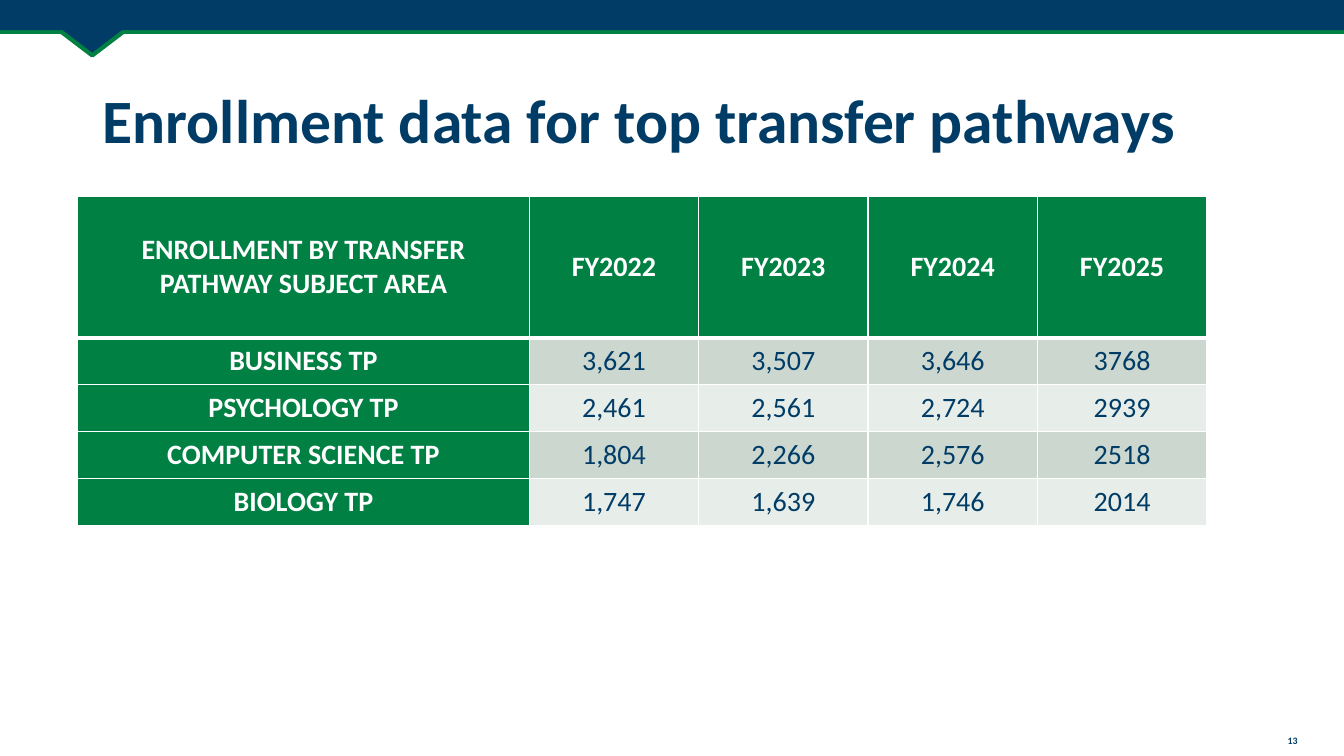
from lxml.etree import SubElement
from pptx import Presentation
from pptx.dml.color import RGBColor
from pptx.enum.shapes import MSO_CONNECTOR, MSO_SHAPE
from pptx.enum.text import MSO_ANCHOR, PP_ALIGN
from pptx.oxml.ns import qn
from pptx.util import Inches, Pt

NAVY, GREEN, WHITE = "003C66", "008042", "FFFFFF"
BANDS = ["CCD8CF", "E7EDE9"]
FONT = "Calibri"

TITLE = "Enrollment data for top transfer pathways"
PAGE_NUMBER = "13"
ENROLLMENT = [
    ["ENROLLMENT BY TRANSFER PATHWAY SUBJECT AREA", "FY2022", "FY2023", "FY2024", "FY2025"],
    ["BUSINESS TP", "3,621", "3,507", "3,646", "3768"],
    ["PSYCHOLOGY TP", "2,461", "2,561", "2,724", "2939"],
    ["COMPUTER SCIENCE TP", "1,804", "2,266", "2,576", "2518"],
    ["BIOLOGY TP", "1,747", "1,639", "1,746", "2014"],
]
COL_WIDTHS = [4.48] + [1.68] * 4
ROW_HEIGHTS = [1.4] + [0.465] * 4


def rgb(color):
    return RGBColor.from_string(color)


def add_run(p, text, size, color, bold):
    r = p.add_run()
    r.text = text
    r.font.name, r.font.size, r.font.bold = FONT, Pt(size), bold
    r.font.color.rgb = rgb(color)


def add_text(s, box, text, size, align):
    tf = s.shapes.add_textbox(*map(Inches, box)).text_frame
    tf.word_wrap = True
    tf.vertical_anchor = MSO_ANCHOR.MIDDLE
    p = tf.paragraphs[0]
    p.alignment = align
    p.line_spacing = 0.9
    add_run(p, text, size, NAVY, True)


def add_banner_shape(s, preset, box):
    sp = s.shapes.add_shape(preset, *map(Inches, box))
    sp.shadow.inherit = False
    sp.fill.solid()
    sp.fill.fore_color.rgb = rgb(NAVY)
    sp.line.fill.background()
    return sp


def add_banner(s):
    rule = s.shapes.add_connector(
        MSO_CONNECTOR.STRAIGHT, 0, Inches(0.32), Inches(13.33), Inches(0.32))
    SubElement(rule._element.spPr, qn("a:effectLst"))
    notch = add_banner_shape(s, MSO_SHAPE.ISOSCELES_TRIANGLE, (0.39, 0.15, 1.05, 0.4))
    notch.rotation = 180
    for sp in (rule, notch):
        sp.line.color.rgb = rgb(GREEN)
        sp.line.width = Pt(3)
    add_banner_shape(s, MSO_SHAPE.RECTANGLE, (0, 0, 13.33, 0.3))


def set_borders(cell, top, bottom):
    """Draw white borders, with the top and bottom widths in points."""
    tc_pr = cell._tc.get_or_add_tcPr()
    for side, width in (("L", 1), ("R", 1), ("T", top), ("B", bottom)):
        ln = SubElement(tc_pr, qn("a:ln" + side), w=str(Pt(width)))
        SubElement(SubElement(ln, qn("a:solidFill")), qn("a:srgbClr"), val=WHITE)


def add_enrollment_table(s):
    table = s.shapes.add_table(
        len(ENROLLMENT), len(COL_WIDTHS), Inches(0.77), Inches(1.95),
        Inches(sum(COL_WIDTHS)), Inches(sum(ROW_HEIGHTS))).table
    for col, width in zip(table.columns, COL_WIDTHS):
        col.width = Inches(width)
    for i, (row, height) in enumerate(zip(ENROLLMENT, ROW_HEIGHTS)):
        table.rows[i].height = Inches(height)
        for j, text in enumerate(row):
            is_label = i == 0 or j == 0
            cell = table.cell(i, j)
            cell.margin_left = cell.margin_right = Inches(0.07)
            cell.margin_top = cell.margin_bottom = 0
            cell.vertical_anchor = MSO_ANCHOR.MIDDLE
            set_borders(cell, top=3 if i == 1 else 1, bottom=3 if i == 0 else 1)
            cell.fill.solid()
            cell.fill.fore_color.rgb = rgb(GREEN if is_label else BANDS[(i - 1) % 2])
            p = cell.text_frame.paragraphs[0]
            p.alignment = PP_ALIGN.CENTER
            p.space_before = p.space_after = Pt(3)
            add_run(p, text, 20, WHITE if is_label else NAVY, is_label)


def main():
    prs = Presentation()
    prs.slide_width, prs.slide_height = Inches(13.33), Inches(7.5)
    s = prs.slides.add_slide(prs.slide_layouts[6])
    add_banner(s)
    add_text(s, (12.57, 7.24, 0.5, 0.22), PAGE_NUMBER, 7, PP_ALIGN.CENTER)
    add_text(s, (0.92, 0.5, 11.5, 1.45), TITLE, 44, PP_ALIGN.LEFT)
    add_enrollment_table(s)
    prs.save("out.pptx")


if __name__ == "__main__":
    main()
